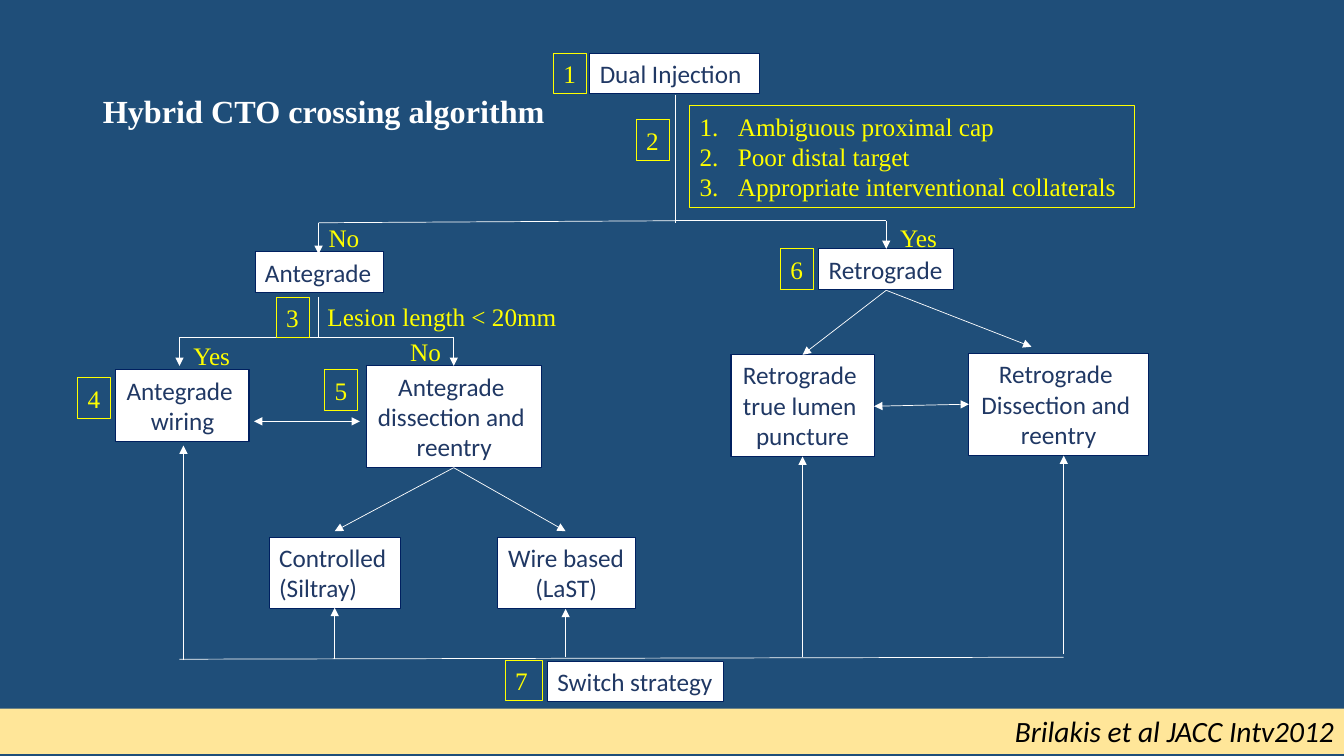
from dataclasses import dataclass
from typing import NamedTuple, Optional

from lxml import etree
from pptx import Presentation
from pptx.dml.color import RGBColor
from pptx.enum.shapes import MSO_CONNECTOR as Connector, MSO_SHAPE as Preset
from pptx.enum.text import MSO_ANCHOR as Anchor, MSO_AUTO_SIZE as AutoSize, PP_ALIGN as Align
from pptx.oxml.ns import qn
from pptx.util import Inches, Pt

NAVY, WHITE, YELLOW, SAND = "1F4E79", "FFFFFF", "FFFF00", "FFE699"
BOX_LINE, BOX_TEXT, BLACK = "002060", "203864", "000000"
SANS, SERIF = "Calibri", "Times New Roman"
ROW = 0.4  # height of a one-line box


class Style(NamedTuple):
    font: str
    color: str
    fill: Optional[str] = None
    line: Optional[str] = None
    size: float = 18
    italic: bool = False
    wrap: bool = False


STEP = Style(SANS, BOX_TEXT, WHITE, BOX_LINE)
BADGE = Style(SERIF, YELLOW, line=YELLOW)
WIDE_BADGE = BADGE._replace(wrap=True)
ANSWER = Style(SERIF, YELLOW)
FOOTER = Style(SANS, BLACK, SAND, size=21, italic=True, wrap=True)


@dataclass
class Box:
    text: str
    left: float
    top: float
    width: float
    height: float = ROW
    align: Align = Align.LEFT


class Link(NamedTuple):
    start: tuple[float, float]
    end: tuple[float, float]
    ends: tuple[str, ...] = ()


ARROW, BOTH = ("tailEnd",), ("headEnd", "tailEnd")

STEPS = [
    Box("Dual Injection", 5.85, 0.53, 1.68),
    Box("Antegrade", 2.53, 2.5, 1.27),
    Box("Retrograde", 8.12, 2.47, 1.34),
    Box("Antegrade \nwiring", 1.15, 3.67, 1.32, 0.71, Align.CENTER),
    Box("Antegrade \ndissection and \nreentry", 3.64, 3.63, 1.73, 1.01, Align.CENTER),
    Box("Controlled\n(Siltray)", 2.67, 5.33, 1.3, 0.71),
    Box("Wire based\n(LaST)", 4.93, 5.33, 1.37, 0.71, Align.CENTER),
    Box("Retrograde \ntrue lumen \npuncture", 7.25, 3.52, 1.42, 1.01, Align.CENTER),
    Box("Retrograde \nDissection and \nreentry", 9.61, 3.51, 1.78, 1.01, Align.CENTER),
    Box("Switch strategy", 5.43, 6.56, 1.75),
]
CRITERIA = Box(
    "Ambiguous proximal cap\nPoor distal target\nAppropriate interventional collaterals",
    6.84, 1.05, 4.41, 1.01,
)
ANSWERS = [
    Box("No", 3.16, 2.16, 0.51),
    Box("Yes", 8.83, 2.16, 0.57),
    Box("Lesion length < 20mm", 3.15, 2.94, 2.5),
    Box("Yes", 1.82, 3.33, 0.57),
    Box("No", 3.97, 3.29, 0.51),
]
BADGE_CORNERS = [(5.49, 0.53), (6.31, 1.19), (2.74, 2.95), (0.77, 3.75),
                 (3.22, 3.67), (7.74, 2.47)]
SWITCH_BADGE = Box("7", 5.01, 6.55, 0.37)

# Junctions shared by several links
INJECTION, ANTEGRADE, RETROGRADE = (6.7, 2.19), (3.16, 2.21), (8.79, 2.19)
LESION, WIRING, DISSECTION = (3.16, 3.35), (1.78, 3.35), (4.5, 3.35)
RETROGRADE_FOOT, DISSECTION_FOOT = (8.79, 2.88), (4.5, 4.64)

LINKS = [
    # Injection to antegrade or retrograde
    Link((6.7, 0.94), (6.7, 2.21)),
    Link(INJECTION, ANTEGRADE),
    Link(ANTEGRADE, (3.16, 2.52), ARROW),
    Link(INJECTION, RETROGRADE),
    Link(RETROGRADE, (8.79, 2.47), ARROW),
    # Lesion length decision
    Link((3.16, 2.95), LESION),
    Link(LESION, WIRING),
    Link(LESION, DISSECTION),
    Link(WIRING, (1.78, 3.63), ARROW),
    Link(DISSECTION, (4.5, 3.63), ARROW),
    # Exchanges between neighbouring techniques
    Link((8.67, 4.03), (9.61, 4.01), BOTH),
    Link((2.52, 4.18), (3.57, 4.18), BOTH),
    # Splits into two techniques
    Link(RETROGRADE_FOOT, (7.96, 3.52), ARROW),
    Link(RETROGRADE_FOOT, (10.23, 3.44), ARROW),
    Link(DISSECTION_FOOT, (3.32, 5.27), ARROW),
    Link(DISSECTION_FOOT, (5.61, 5.27), ARROW),
    # Switch strategy line and its risers
    Link((1.78, 6.54), (10.55, 6.52)),
    *(Link((x, bottom), (x, top), ARROW) for x, bottom, top in [
        (1.82, 6.55, 4.42), (3.32, 6.54, 6.03), (5.61, 6.52, 6.04),
        (7.96, 6.52, 4.53), (10.55, 6.49, 4.52)]),
]


def rgb(color: str) -> RGBColor:
    return RGBColor.from_string(color)


def apply(target, values: dict) -> None:
    for name, value in values.items():
        setattr(target, name, value)


def write(frame, text: str, style: Style, align: Align) -> None:
    apply(frame, {"text": text, "word_wrap": style.wrap, "vertical_anchor": Anchor.TOP,
                  "auto_size": AutoSize.SHAPE_TO_FIT_TEXT})
    for paragraph in frame.paragraphs:
        paragraph.alignment = align
        for run in paragraph.runs:
            apply(run.font, {"name": style.font, "size": Pt(style.size),
                             "italic": style.italic})
            run.font.color.rgb = rgb(style.color)


def add_box(slide, box: Box, style: Style):
    area = [Inches(length) for length in (box.left, box.top, box.width, box.height)]
    if style.fill or style.line:
        shape = slide.shapes.add_shape(Preset.RECTANGLE, *area)
        shape.shadow.inherit = False
    else:
        shape = slide.shapes.add_textbox(*area)
    if style.fill:
        shape.fill.solid()
        shape.fill.fore_color.rgb = rgb(style.fill)
    else:
        shape.fill.background()
    if style.line:
        shape.line.color.rgb = rgb(style.line)
        shape.line.width = Pt(0.75)
    else:
        shape.line.fill.background()
    write(shape.text_frame, box.text, style, box.align)
    return shape


def add_link(slide, link: Link) -> None:
    points = [Inches(length) for length in (*link.start, *link.end)]
    connector = slide.shapes.add_connector(Connector.STRAIGHT, *points)
    connector.line.color.rgb = rgb(WHITE)
    connector.line.width = Pt(0.5)
    outline = connector.line._get_or_add_ln()
    for end in link.ends:
        etree.SubElement(outline, qn(f"a:{end}"), type="triangle")
    etree.SubElement(connector._element.spPr, qn("a:effectLst"))


def number_paragraphs(frame) -> None:
    indent = Inches(0.38)
    for paragraph in frame.paragraphs:
        properties = paragraph._p.get_or_add_pPr()
        properties.set("marL", str(indent))
        properties.set("indent", str(-indent))
        etree.SubElement(properties, qn("a:buAutoNum"), type="arabicPeriod")


def add_title(slide, text: str) -> None:
    title = slide.shapes.title
    apply(title, {"left": Inches(0.92), "top": Inches(0.4),
                  "width": Inches(11.5), "height": Inches(1.45)})
    apply(title.text_frame, {"text": text, "vertical_anchor": Anchor.MIDDLE,
                             "auto_size": AutoSize.NONE})
    paragraph = title.text_frame.paragraphs[0]
    apply(paragraph, {"alignment": Align.LEFT, "line_spacing": 0.9})
    font = paragraph.runs[0].font
    apply(font, {"name": SERIF, "size": Pt(23), "bold": True})
    font.color.rgb = rgb(WHITE)


def main() -> None:
    presentation = Presentation()
    apply(presentation, {"slide_width": Inches(13.33), "slide_height": Inches(7.5)})
    slide = presentation.slides.add_slide(presentation.slide_layouts[5])
    slide.background.fill.solid()
    slide.background.fill.fore_color.rgb = rgb(NAVY)

    # Title and citation
    add_title(slide, "Hybrid CTO crossing algorithm")
    citation = Box("Brilakis et al JACC Intv2012", 0, 7.03, 13.33, 0.45, Align.RIGHT)
    add_box(slide, citation, FOOTER)

    # Flowchart
    for step in STEPS:
        add_box(slide, step, STEP)
    for link in LINKS:
        add_link(slide, link)

    # Criteria, answers and step numbers
    number_paragraphs(add_box(slide, CRITERIA, BADGE).text_frame)
    for answer in ANSWERS:
        add_box(slide, answer, ANSWER)
    for number, (left, top) in enumerate(BADGE_CORNERS, start=1):
        add_box(slide, Box(str(number), left, top, 0.33), BADGE)
    add_box(slide, SWITCH_BADGE, WIDE_BADGE)

    presentation.save("out.pptx")


if __name__ == "__main__":
    main()
